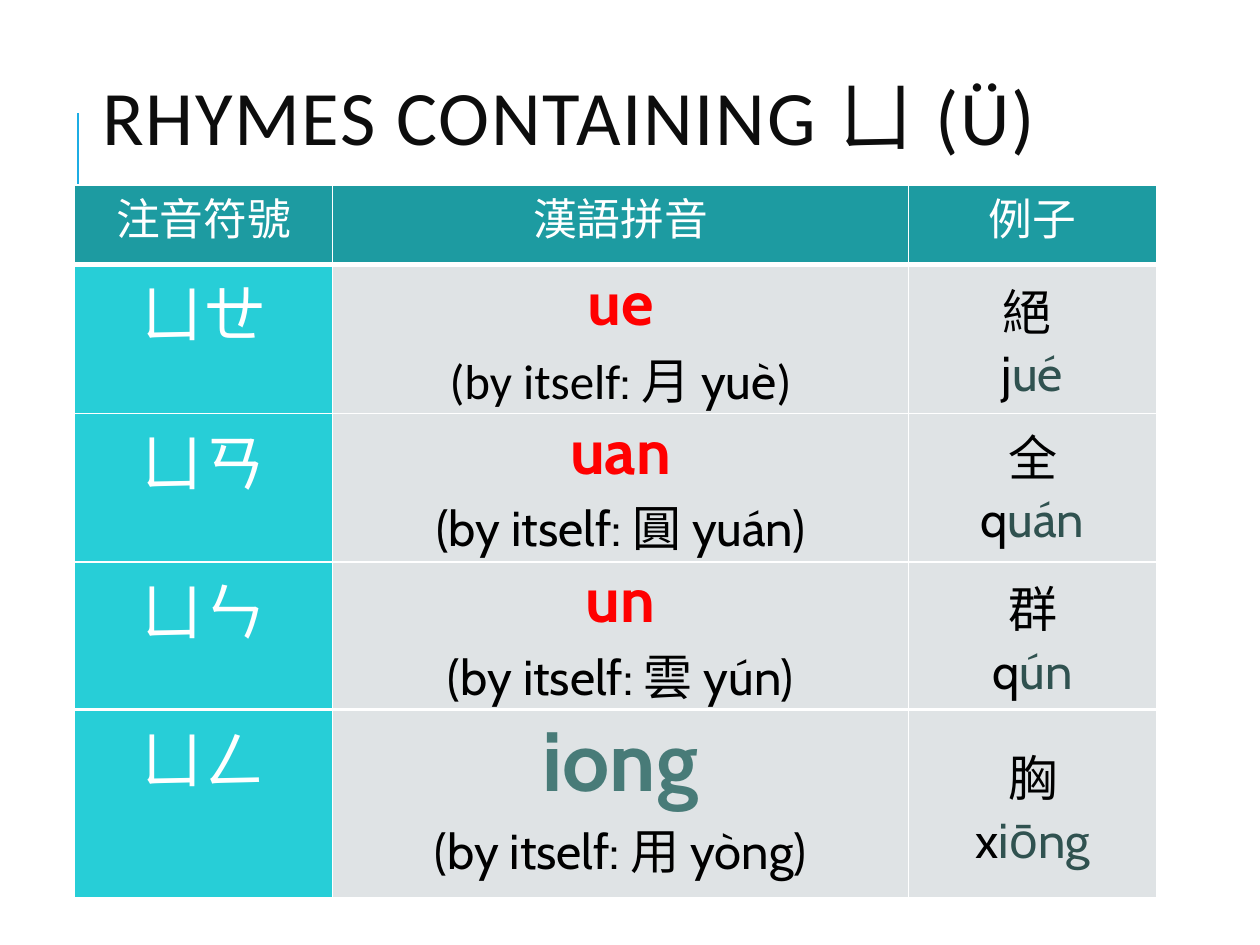
from lxml import etree
from pptx import Presentation
from pptx.dml.color import RGBColor
from pptx.enum.shapes import MSO_CONNECTOR
from pptx.enum.text import MSO_ANCHOR, MSO_AUTO_SIZE, PP_ALIGN
from pptx.oxml.ns import qn
from pptx.util import Inches, Pt

CENTER, LEFT = PP_ALIGN.CENTER, PP_ALIGN.LEFT
TOP, MIDDLE = MSO_ANCHOR.TOP, MSO_ANCHOR.MIDDLE

# Content
TITLE = "RHYMES CONTAINING ㄩ (Ü)"
HEADS = ["注音符號", "漢語拼音", "例子"]
# symbol, pinyin, pinyin size, colour, note, character, initial, rhyme
UE = [("u", "Calibri"), ("e", "Cabin")]
UE_NOTE = [("(by itself", "Calibri"), (": 月 yuè", "Cabin"), (")", "Calibri")]
RHYMES = [
    ("ㄩㄝ", UE, 36, "FF0000", UE_NOTE, "絕 ", "j", "ué"),
    ("ㄩㄢ", [("uan", "Cabin")], 36, "FF0000",
     [("(by itself: 圓 yuán)", "Cabin")], "全", "q", "uán"),
    ("ㄩㄣ", [("un", "Cabin")], 36, "FF0000",
     [("(by itself: 雲 yún)", "Cabin")], "群", "q", "ún"),
    ("ㄩㄥ", [("iong", "Cabin")], 48, "487B78",
     [("(by itself: 用 yòng)", "Cabin")], "胸", "x", "iōng"),
]
COLS = [2.05, 4.57, 1.97]
X, Y = 0.59, 1.47
HEAD_H, ROW_H, LAST_H = 0.63, 1.18, 1.5
BODY_FILLS = ["27CED7", "DFE3E5", "DFE3E5"]


def rgb(code):
    return RGBColor.from_string(code)


def add_run(para, text, font, size, color, bold=False):
    run = para.add_run()
    run.text = text
    run.font.name = font
    run.font.size = Pt(size)
    run.font.bold = bold
    run.font.color.rgb = rgb(color)
    return run


def set_edges(cell, base):
    props = cell._tc.get_or_add_tcPr()
    for i, (side, width) in enumerate([("L", 1), ("R", 1), ("T", 1), ("B", base)]):
        edge = etree.Element(qn("a:ln" + side), w=str(Pt(width)))
        fill = etree.SubElement(edge, qn("a:solidFill"))
        etree.SubElement(fill, qn("a:srgbClr"), val="FFFFFF")
        props.insert(i, edge)


def fill_cell(cell, paras, fill, anchor=TOP, base=1, side=0.07, pad=0):
    cell.fill.solid()
    cell.fill.fore_color.rgb = rgb(fill)
    set_edges(cell, base)
    cell.vertical_anchor = anchor
    cell.margin_left = cell.margin_right = Inches(side)
    cell.margin_top = cell.margin_bottom = Inches(pad)
    frame = cell.text_frame
    for i, runs in enumerate(paras):
        para = frame.add_paragraph() if i else frame.paragraphs[0]
        para.alignment = CENTER
        for run in runs:
            add_run(para, *run)


def fill_row(table, row, rhyme, base):
    sign, rime, size, color, note, char, start, end = rhyme
    sign_font = "DejaVu Sans Mono" if rime is UE else "Cabin"
    texts = [
        [[(sign, sign_font, 36, "FFFFFF")]],
        [[(t, f, size, color, True) for t, f in rime],
         [(t, f, 28, "000000") for t, f in note]],
        [[(char, "Cabin", 28, "000000")],
         [(start, "Cabin", 28, "000000"), (end, "Cabin", 28, "305250")]],
    ]
    for col, paras in enumerate(texts):
        look = {"anchor": MIDDLE if col == 2 else TOP}
        if char == "全" and col == 2:
            look = {"side": 0.1, "pad": 0.05}
        fill_cell(table.cell(row, col), paras, BODY_FILLS[col], base=base, **look)


def add_grid(slide, top, heights):
    table = slide.shapes.add_table(
        len(heights), len(COLS), Inches(X), Inches(top),
        Inches(sum(COLS)), Inches(sum(heights))).table
    for col, width in zip(table.columns, COLS):
        col.width = Inches(width)
    for row, height in zip(table.rows, heights):
        row.height = Inches(height)
    return table


def main():
    deck = Presentation()
    deck.slide_width, deck.slide_height = Inches(10), Inches(7.5)
    slide = deck.slides.add_slide(deck.slide_layouts[5])

    # Accent line
    line = slide.shapes.add_connector(
        MSO_CONNECTOR.STRAIGHT, Inches(0.62), Inches(1.9), Inches(0.62), Inches(0.9))
    line.line.color.rgb = rgb("1CADE4")
    line.line.width = Pt(1.5)
    etree.SubElement(line._element.spPr, qn("a:effectLst"))

    # Title
    title = slide.shapes.title
    title.left, title.top = Inches(0.71), Inches(0.16)
    title.width, title.height = Inches(7.97), Inches(1.64)
    frame = title.text_frame
    frame.word_wrap = True
    frame.auto_size = MSO_AUTO_SIZE.NONE
    frame.vertical_anchor = MIDDLE
    para = frame.paragraphs[0]
    para.alignment = LEFT
    para.line_spacing = 0.8
    run = add_run(para, TITLE, "Calibri", 44, "0D0D0D")
    run.font._element.set("spc", "100")

    # Header and first two rhymes share a table
    table = add_grid(slide, Y, [HEAD_H, ROW_H, ROW_H])
    for col, head in enumerate(HEADS):
        fill_cell(table.cell(0, col), [[(head, "Cabin", 25, "FFFFFF")]],
                  "1D9BA1", base=3)
    for row, rhyme in enumerate(RHYMES[:2], 1):
        fill_row(table, row, rhyme, 1)

    # The other rhymes have a table each
    top = Y + HEAD_H + 2 * ROW_H
    for rhyme, height in zip(RHYMES[2:], [ROW_H, LAST_H]):
        fill_row(add_grid(slide, top, [height]), 0, rhyme, 3)
        top += height

    deck.save("out.pptx")


if __name__ == "__main__":
    main()
